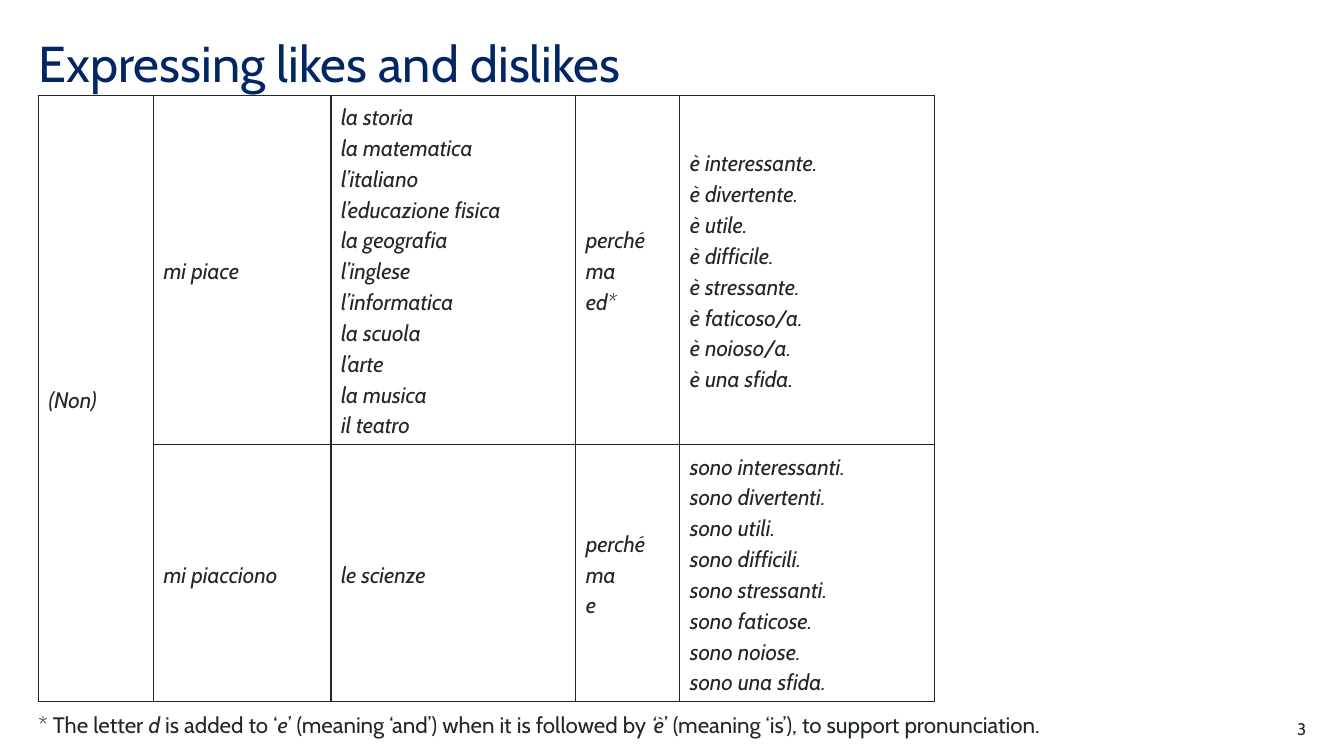
from lxml import etree
from pptx import Presentation
from pptx.dml.color import RGBColor
from pptx.enum.text import MSO_ANCHOR, MSO_AUTO_SIZE, PP_ALIGN
from pptx.oxml.ns import qn
from pptx.util import Cm, Pt

TOP, MIDDLE = MSO_ANCHOR.TOP, MSO_ANCHOR.MIDDLE
LEFT, RIGHT = PP_ALIGN.LEFT, PP_ALIGN.RIGHT
NO_FIT = MSO_AUTO_SIZE.NONE
NAVY = RGBColor(0x00, 0x26, 0x64)
INK = RGBColor(0x22, 0x27, 0x2B)
FONT = "Cabin"

# Content
TITLE = "Expressing likes and dislikes"
ROWS = [
    [
        ["(Non)"],
        ["mi piace"],
        ["la storia", "la matematica", "l’italiano", "l’educazione fisica",
         "la geografia", "l’inglese", "l’informatica", "la scuola", "l’arte",
         "la musica", "il teatro"],
        ["perché", "ma", "ed*"],
        ["è interessante.", "è divertente.", "è utile.", "è difficile.",
         "è stressante.", "è faticoso/a.", "è noioso/a.", "è una sfida."],
    ],
    [
        [],
        ["mi piacciono"],
        ["le scienze"],
        ["perché", "ma", "e"],
        ["sono interessanti.", "sono divertenti.", "sono utili.",
         "sono difficili.", "sono stressanti.", "sono faticose.",
         "sono noiose.", "sono una sfida."],
    ],
]
# Every second piece of the note is italic
NOTE = ("* The letter ", "d", " is added to ‘", "e",
        "’ (meaning ‘and’) when it is followed by ", "‘è",
        "’ (meaning ‘is’), to support pronunciation.")
NUMBER = "3"

# Layout in cm
EDGE = 0.97
WIDTHS = [2.9, 4.47, 6.17, 2.62, 6.43]
HEIGHTS = [8.79, 6.48]


def write(frame, lines, size=16, color=INK, italic=False, align=LEFT, space=1.0):
    """Fill a frame; a tuple line alternates plain and italic pieces."""
    for i, line in enumerate(lines):
        para = frame.paragraphs[0] if i == 0 else frame.add_paragraph()
        para.alignment, para.line_spacing = align, space
        pieces = (line,) if isinstance(line, str) else line
        for j, piece in enumerate(pieces):
            run = para.add_run()
            run.text = piece
            font = run.font
            font.name, font.size, font.color.rgb = FONT, Pt(size), color
            font.italic = italic or j % 2 == 1


def setup(shape, left, top, width, height):
    """Place a text shape and clear its margins."""
    shape.left, shape.top = Cm(left), Cm(top)
    shape.width, shape.height = Cm(width), Cm(height)
    frame = shape.text_frame
    frame.margin_left = frame.margin_right = 0
    frame.margin_top = frame.margin_bottom = 0
    frame.word_wrap, frame.auto_size = True, NO_FIT
    frame.vertical_anchor = TOP
    return frame


def border(cell):
    """Draw a thin line on all four sides of a cell."""
    props = cell._tc.get_or_add_tcPr()
    for i, side in enumerate(("a:lnL", "a:lnR", "a:lnT", "a:lnB")):
        line = etree.Element(qn(side), w=str(Pt(1)))
        fill = etree.SubElement(line, qn("a:solidFill"))
        etree.SubElement(fill, qn("a:srgbClr"), val=str(INK))
        props.insert(i, line)


def main():
    prs = Presentation()
    prs.slide_width, prs.slide_height = Cm(33.87), Cm(19.05)
    slide = prs.slides.add_slide(prs.slide_layouts[5])
    shapes = slide.shapes

    # Title
    frame = setup(shapes.title, EDGE, 0.99, 28, 2.8)
    write(frame, [TITLE], size=36, color=NAVY, space=0.9)

    # Table
    table = shapes.add_table(len(ROWS), len(WIDTHS), Cm(EDGE), Cm(2.4),
                             Cm(sum(WIDTHS)), Cm(sum(HEIGHTS))).table
    table.first_row = table.horz_banding = False
    for col, width in zip(table.columns, WIDTHS):
        col.width = Cm(width)
    for row, height, texts in zip(table.rows, HEIGHTS, ROWS):
        row.height = Cm(height)
        for cell, lines in zip(row.cells, texts):
            cell.fill.background()
            cell.vertical_anchor = MIDDLE
            border(cell)
            write(cell.text_frame, lines, italic=True, space=1.14)
    table.cell(0, 0).merge(table.cell(1, 0))

    # Note and slide number
    for lines, box, style in (
        ([NOTE], (EDGE, 17.93, 31.93, 0.81), {}),
        ([NUMBER], (30.91, 18.11, 2.01, 0.51), {"size": 12, "align": RIGHT}),
    ):
        shape = shapes.add_textbox(0, 0, 0, 0)
        write(setup(shape, *box), lines, **style)

    prs.save("out.pptx")


if __name__ == "__main__":
    main()
